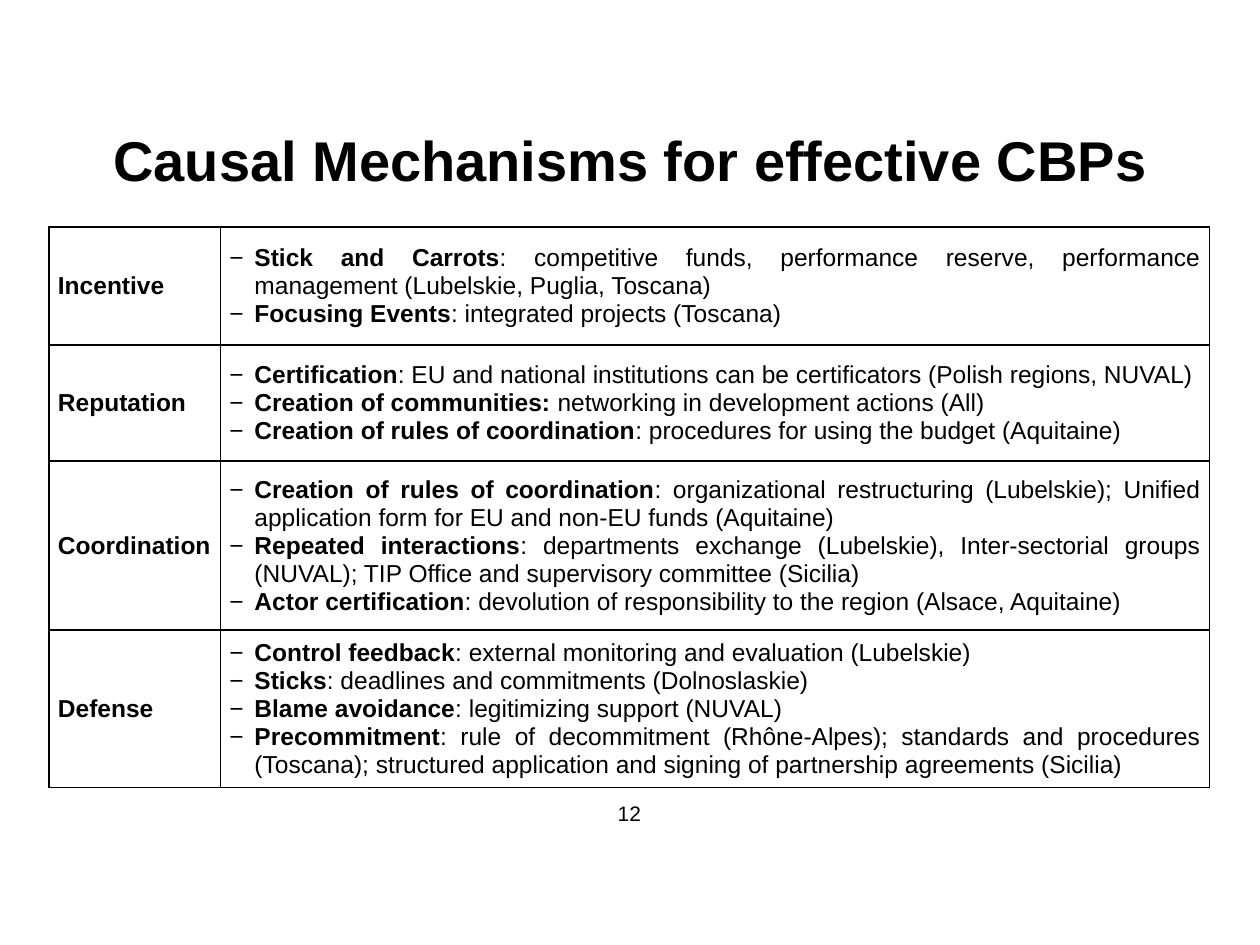
from lxml.etree import SubElement as Sub
from pptx import Presentation
from pptx.dml.color import RGBColor as RGB
from pptx.enum.text import MSO_ANCHOR as Anchor, PP_ALIGN as Align
from pptx.oxml.ns import qn
from pptx.util import Inches, Pt

COLORS = {"ink": "000000", "paper": "FFFFFF"}
FONT = "Arial"
COLS = [1.36, 7.85]
ROWS = [
    ("Incentive", 0.94, [
        ("Stick and Carrots", ": competitive funds, performance reserve, "
         "performance management (Lubelskie, Puglia, Toscana)"),
        ("Focusing Events", ": integrated projects (Toscana)"),
    ]),
    ("Reputation", 0.92, [
        ("Certification", ": EU and national institutions can be certificators "
         "(Polish regions, NUVAL)"),
        ("Creation of communities:", " networking in development actions (All)"),
        ("Creation of rules of coordination",
         ": procedures for using the budget (Aquitaine)"),
    ]),
    ("Coordination", 1.34, [
        ("Creation of rules of coordination",
         ": organizational restructuring (Lubelskie); Unified application form "
         "for EU and non-EU funds (Aquitaine)"),
        ("Repeated interactions", ": departments exchange (Lubelskie), "
         "Inter-sectorial groups (NUVAL); TIP Office and supervisory committee "
         "(Sicilia)"),
        ("Actor certification",
         ": devolution of responsibility to the region (Alsace, Aquitaine)"),
    ]),
    ("Defense", 1.25, [
        ("Control feedback", ": external monitoring and evaluation (Lubelskie)"),
        ("Sticks", ": deadlines and commitments (Dolnoslaskie)"),
        ("Blame avoidance", ": legitimizing support (NUVAL)"),
        ("Precommitment", ": rule of decommitment (Rhône-Alpes); standards and "
         "procedures (Toscana); structured application and signing of "
         "partnership agreements (Sicilia)"),
    ]),
]


def style(para, size, align):
    para.alignment = align
    font = para.font
    font.name, font.size = FONT, Pt(size)
    font.color.rgb = RGB.from_string(COLORS["ink"])


def add_run(para, text, bold):
    run = para.add_run()
    run.text = text
    run.font.bold = bold


def add_dash(para):
    """Give the paragraph a hanging dash bullet."""
    props = para._p.get_or_add_pPr()
    props.set("marL", str(Inches(0.2)))
    props.set("indent", str(-Inches(0.2)))
    Sub(props, qn("a:buFont"), typeface=FONT)
    Sub(props, qn("a:buChar"), char="−")


def add_borders(cell):
    props = cell._tc.get_or_add_tcPr()
    for i, side in enumerate(("lnL", "lnR", "lnT", "lnB")):
        line = props.makeelement(qn("a:" + side), {"w": str(Pt(1))})
        fill = Sub(line, qn("a:solidFill"))
        Sub(fill, qn("a:srgbClr"), val=COLORS["ink"])
        props.insert(i, line)


def fill_cell(cell, items, dash):
    """Write (bold, plain) pairs, one paragraph each."""
    cell.fill.solid()
    cell.fill.fore_color.rgb = RGB.from_string(COLORS["paper"])
    cell.vertical_anchor = Anchor.MIDDLE
    cell.margin_left = cell.margin_top = cell.margin_bottom = Inches(0.07)
    # The longest label needs a little more room than the dashed text.
    cell.margin_right = Inches(0.07 if dash else 0.04)
    add_borders(cell)
    frame = cell.text_frame
    for i, (head, rest) in enumerate(items):
        para = frame.add_paragraph() if i else frame.paragraphs[0]
        para.line_spacing = Pt(16)
        if dash:
            add_dash(para)
        style(para, 14, Align.JUSTIFY)
        add_run(para, head, True)
        if rest:
            add_run(para, rest, False)


def add_grid(slide):
    high = sum(row[1] for row in ROWS)
    table = slide.shapes.add_table(
        len(ROWS), len(COLS), Inches(0.39), Inches(1.8),
        Inches(sum(COLS)), Inches(high)).table
    table.first_row = table.horz_banding = False
    for col, wide in zip(table.columns, COLS):
        col.width = Inches(wide)
    for row, (name, high, items) in zip(table.rows, ROWS):
        row.height = Inches(high)
        fill_cell(row.cells[0], [(name, "")], False)
        fill_cell(row.cells[1], items, True)


def set_title(slide, text):
    title = slide.shapes.title
    title.left, title.top = Inches(0.28), Inches(0.95)
    title.width, title.height = Inches(9.45), Inches(0.63)
    frame = title.text_frame
    frame.vertical_anchor = Anchor.MIDDLE
    para = frame.paragraphs[0]
    style(para, 32, Align.CENTER)
    add_run(para, text, True)


def add_number(slide, text):
    box = slide.shapes.add_textbox(
        Inches(4.62), Inches(6.25), Inches(0.75), Inches(0.4))
    frame = box.text_frame
    frame.word_wrap = True
    frame.vertical_anchor = Anchor.MIDDLE
    para = frame.paragraphs[0]
    style(para, 12, Align.CENTER)
    add_run(para, text, False)


def main():
    deck = Presentation()
    deck.slide_width, deck.slide_height = Inches(10), Inches(7.5)
    slide = deck.slides.add_slide(deck.slide_layouts[5])
    set_title(slide, "Causal Mechanisms for effective CBPs")
    add_number(slide, "12")
    add_grid(slide)
    deck.save("out.pptx")


if __name__ == "__main__":
    main()
